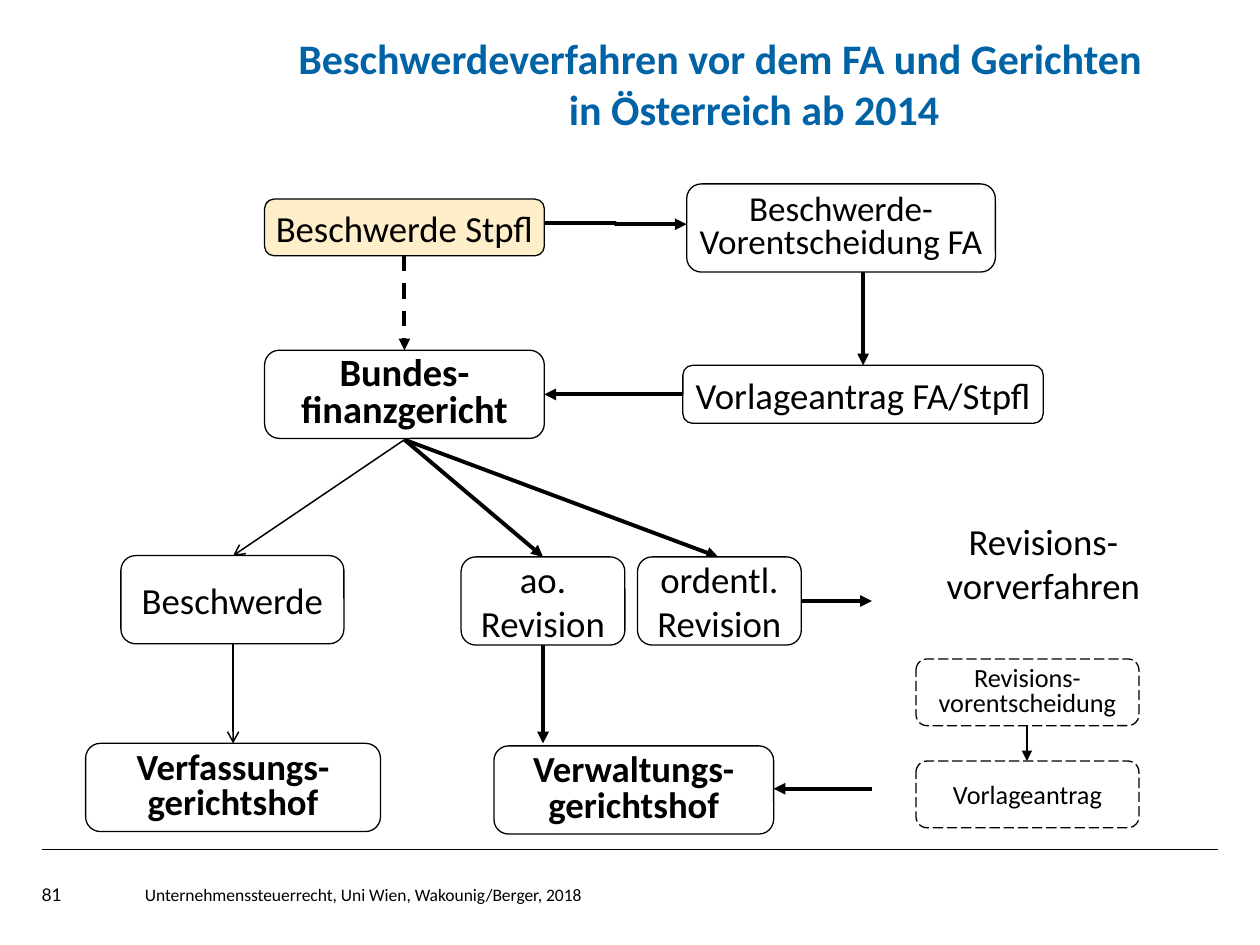
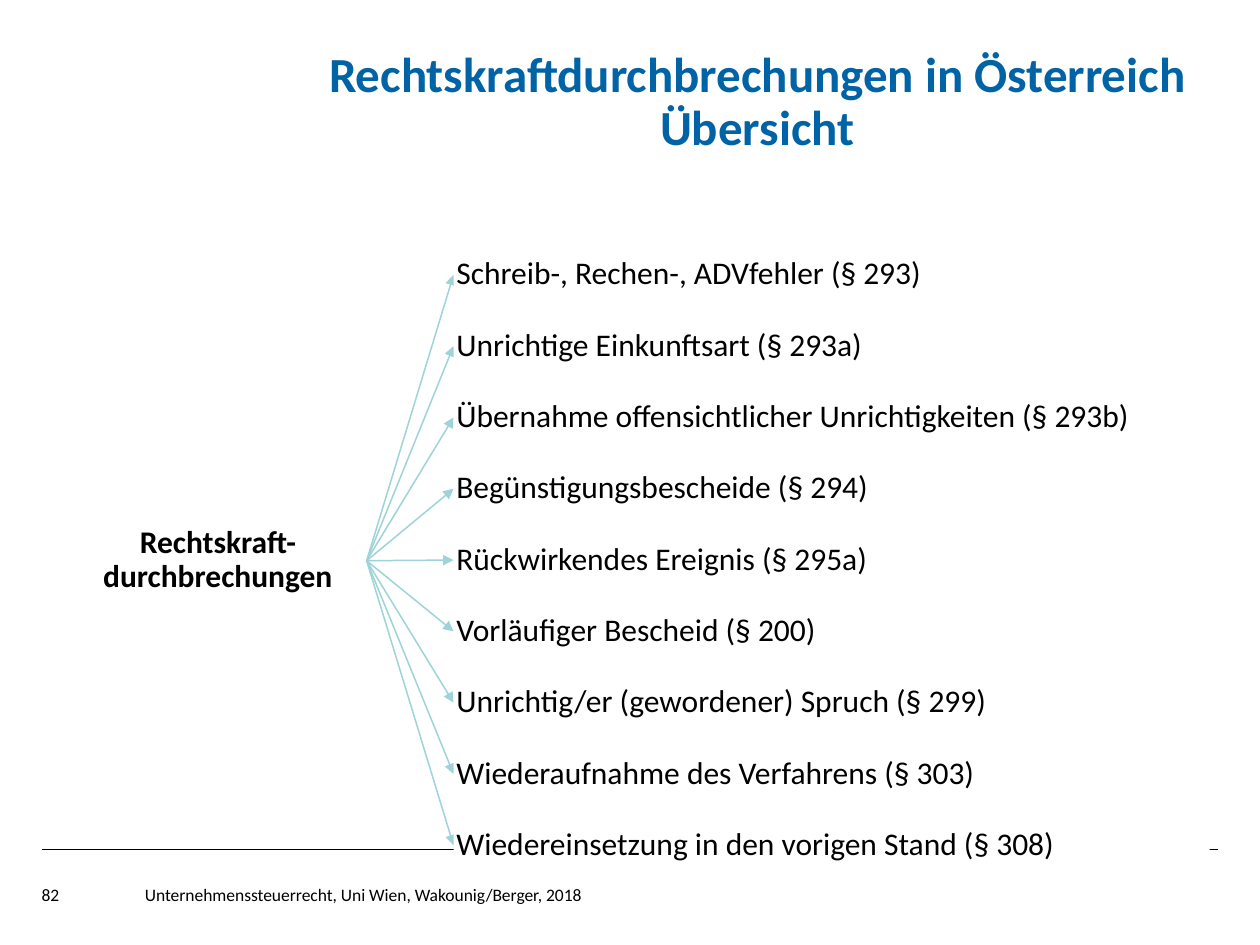
"""Builds two slides on appeal procedures and exceptions to legal force in Austria."""
from lxml import etree
from pptx import Presentation
from pptx.dml.color import RGBColor
from pptx.enum.dml import MSO_LINE
from pptx.enum.shapes import MSO_CONNECTOR, MSO_SHAPE
from pptx.enum.text import MSO_ANCHOR, PP_ALIGN
from pptx.oxml.ns import qn
from pptx.util import Inches, Pt

STRAIGHT, ELBOW = MSO_CONNECTOR.STRAIGHT, MSO_CONNECTOR.ELBOW
ROUNDED, RECTANGLE = MSO_SHAPE.ROUNDED_RECTANGLE, MSO_SHAPE.RECTANGLE
DASH, LONG_DASH = MSO_LINE.DASH, MSO_LINE.LONG_DASH
LEFT, CENTER = PP_ALIGN.LEFT, PP_ALIGN.CENTER
TOP, MIDDLE, BOTTOM = MSO_ANCHOR.TOP, MSO_ANCHOR.MIDDLE, MSO_ANCHOR.BOTTOM

COLORS = {"black": "000000", "white": "FFFFFF", "title": "0063A6", "start": "FFEECA", "ray": "9ED3D7"}
RGB = {name: RGBColor.from_string(value) for name, value in COLORS.items()}
FOOTER = "Unternehmenssteuerrecht, Uni Wien, Wakounig/Berger, 2018"


def write_text(shape, text, size, bold=False, color="black", align=LEFT, anchor=TOP,
               spacing=1.0, insets=(0, 0), wrap=True, font_name="Calibri"):
    frame = shape.text_frame
    horizontal, vertical = Inches(insets[0]), Inches(insets[1])
    frame_format = {"word_wrap": wrap, "vertical_anchor": anchor, "margin_left": horizontal,
                    "margin_right": horizontal, "margin_top": vertical, "margin_bottom": vertical}
    for name, value in frame_format.items():
        setattr(frame, name, value)
    frame.text = text
    for paragraph in frame.paragraphs:
        paragraph.alignment = align
        paragraph.line_spacing = spacing
        for name, value in {"name": font_name, "size": Pt(size), "bold": bold}.items():
            setattr(paragraph.font, name, value)
        paragraph.font.color.rgb = RGB[color]


def add_line(slide, start, end, width, color="black", head=None, dash=None, kind=STRAIGHT):
    connector = slide.shapes.add_connector(kind, *map(Inches, start + end))
    connector.line.color.rgb = RGB[color]
    connector.line.width = Pt(width)
    if dash:
        connector.line.dash_style = dash
    properties = connector._element.spPr
    if head:
        etree.SubElement(properties.find(qn("a:ln")), qn("a:tailEnd"), type=head)
    etree.SubElement(properties, qn("a:effectLst"))


presentation = Presentation()
presentation.slide_width, presentation.slide_height = Inches(10), Inches(7.5)

titles = [
    ("81", "Lato", "Beschwerdeverfahren vor dem FA und Gerichten\nin Österreich ab 2014",
     (2.14, 0.21, 7.15, 0.91), {"size": 24, "insets": (0.1, 0.05)}),
    ("82", "Calibri", "Rechtskraftdurchbrechungen in Österreich\nÜbersicht",
     (2.31, 0.75, 7.4, 0.49), {"size": 28, "anchor": BOTTOM, "spacing": 0.9}),
]
slides = []
for number, number_font, title, title_box, title_format in titles:
    slide = presentation.slides.add_slide(presentation.slide_layouts[6])
    add_line(slide, (0.33, 6.74), (9.67, 6.74), 0.75)
    title_shape = slide.shapes.add_textbox(*map(Inches, title_box))
    write_text(title_shape, title, bold=True, color="title", align=CENTER, **title_format)
    number_shape = slide.shapes.add_textbox(*map(Inches, (0.33, 7.02, 0.79, 0.4)))
    write_text(number_shape, number, 10, font_name=number_font)
    footer_shape = slide.shapes.add_textbox(*map(Inches, (1.15, 7.02, 7.61, 0.4)))
    write_text(footer_shape, FOOTER, 10)
    slides.append(slide)
procedure_slide, overview_slide = slides

second_title_line = procedure_slide.shapes[1].text_frame.paragraphs[1]
second_title_line._p.get_or_add_pPr().set("marL", str(Inches(0.54)))

revision_panels = [
    (ROUNDED, (6.92, 3.85, 2.48, 2.84), ""),
    (RECTANGLE, (7.27, 4.07, 2.02, 0.81), "Revisions-\nvorverfahren"),
]
for kind, box, text in revision_panels:
    shape = procedure_slide.shapes.add_shape(kind, *map(Inches, box))
    shape.shadow.inherit = False
    shape.fill.solid()
    shape.fill.fore_color.rgb = RGB["white"]
    shape.line.fill.background()
    if text:
        write_text(shape, text, 21, align=CENTER, insets=(0.1, 0.05))

court_bottom = (3.21, 3.49)
arrows = [
    ((4.32, 1.77), (5.45, 1.78), 2.25, "triangle", None, ELBOW),
    ((6.85, 2.16), (6.85, 2.9), 2.25, "triangle", None, STRAIGHT),
    ((5.42, 3.13), (4.32, 3.13), 2.25, "triangle", None, STRAIGHT),
    ((3.21, 2.03), (3.21, 2.78), 2.25, "triangle", DASH, STRAIGHT),
    (court_bottom, (1.85, 4.41), 0.85, "arrow", None, STRAIGHT),
    (court_bottom, (4.31, 4.42), 2.25, "triangle", None, STRAIGHT),
    (court_bottom, (5.7, 4.42), 2.25, "triangle", None, STRAIGHT),
    ((1.85, 5.11), (1.85, 5.9), 0.85, "arrow", None, STRAIGHT),
    ((4.31, 5.12), (4.31, 5.9), 2.25, "triangle", None, STRAIGHT),
    ((6.35, 4.77), (6.92, 4.77), 2.25, "triangle", None, STRAIGHT),
    ((8.15, 5.76), (8.15, 6.04), 1, "triangle", None, STRAIGHT),
    ((6.92, 6.26), (6.14, 6.26), 2.25, "triangle", None, STRAIGHT),
]
for start, end, width, head, dash, kind in arrows:
    add_line(procedure_slide, start, end, width, head=head, dash=dash, kind=kind)

steps = [
    ("Beschwerde Stpfl", (2.1, 1.58, 2.22, 0.45), 21, False, 1.0),
    ("Beschwerde-\nVorentscheidung FA", (5.45, 1.46, 2.45, 0.7), 20, False, 0.8),
    ("Bundes-\nfinanzgericht", (2.1, 2.78, 2.22, 0.7), 22, True, 0.8),
    ("Vorlageantrag FA/Stpfl", (5.42, 2.9, 2.86, 0.46), 21, False, 1.0),
    ("Beschwerde", (0.96, 4.41, 1.77, 0.7), 21, False, 1.0),
    ("ao.\nRevision", (3.66, 4.42, 1.3, 0.7), 21, False, 1.0),
    ("ordentl.\nRevision", (5.06, 4.42, 1.3, 0.7), 21, False, 1.0),
    ("Verfassungs-\ngerichtshof", (0.68, 5.9, 2.34, 0.7), 21, True, 0.8),
    ("Verwaltungs-\ngerichtshof", (3.92, 5.92, 2.22, 0.7), 21, True, 0.8),
    ("Revisions-\nvorentscheidung", (7.27, 5.23, 1.77, 0.53), 15, False, 0.8),
    ("Vorlageantrag", (7.27, 6.04, 1.77, 0.53), 15, False, 1.0),
]
for text, box, size, bold, spacing in steps:
    shape = procedure_slide.shapes.add_shape(ROUNDED, *map(Inches, box))
    shape.shadow.inherit = False
    shape.fill.solid()
    shape.fill.fore_color.rgb = RGB["start" if text == "Beschwerde Stpfl" else "white"]
    shape.line.color.rgb = RGB["black"]
    shape.line.width = Pt(0.75)
    if size == 15:
        shape.line.dash_style = LONG_DASH
    write_text(shape, text, size, bold, align=CENTER, anchor=MIDDLE, spacing=spacing, wrap=False)

root_shape = overview_slide.shapes.add_textbox(*map(Inches, (0.58, 4.05, 2.3, 0.8)))
write_text(root_shape, "Rechtskraft-durchbrechungen", 18, True, align=CENTER, anchor=MIDDLE,
           spacing=0.9, insets=(0, 0.01))

exceptions = [
    "Schreib-, Rechen-, ADVfehler (§ 293)",
    "Unrichtige Einkunftsart (§ 293a)",
    "Übernahme offensichtlicher Unrichtigkeiten (§ 293b)",
    "Begünstigungsbescheide (§ 294)",
    "Rückwirkendes Ereignis (§ 295a)",
    "Vorläufiger Bescheid (§ 200)",
    "Unrichtig/er (gewordener) Spruch (§ 299)",
    "Wiederaufnahme des Verfahrens (§ 303)",
    "Wiedereinsetzung in den vorigen Stand (§ 308)",
]
first_center, last_center = 2.18, 6.71
row_step = (last_center - first_center) / (len(exceptions) - 1)
for index, text in enumerate(exceptions):
    center = first_center + index * row_step
    add_line(overview_slide, (2.91, 4.45), (3.6, center), 0.85, "ray", "triangle")
    shape = overview_slide.shapes.add_shape(ROUNDED, *map(Inches, (3.6, center - 0.22, 6, 0.44)))
    shape.adjustments[0] = 0.1
    shape.shadow.inherit = False
    shape.fill.solid()
    shape.fill.fore_color.rgb = RGB["white"]
    shape.line.fill.background()
    write_text(shape, text, 18, anchor=MIDDLE, spacing=0.9, insets=(0.01, 0.01))

presentation.save("out.pptx")
